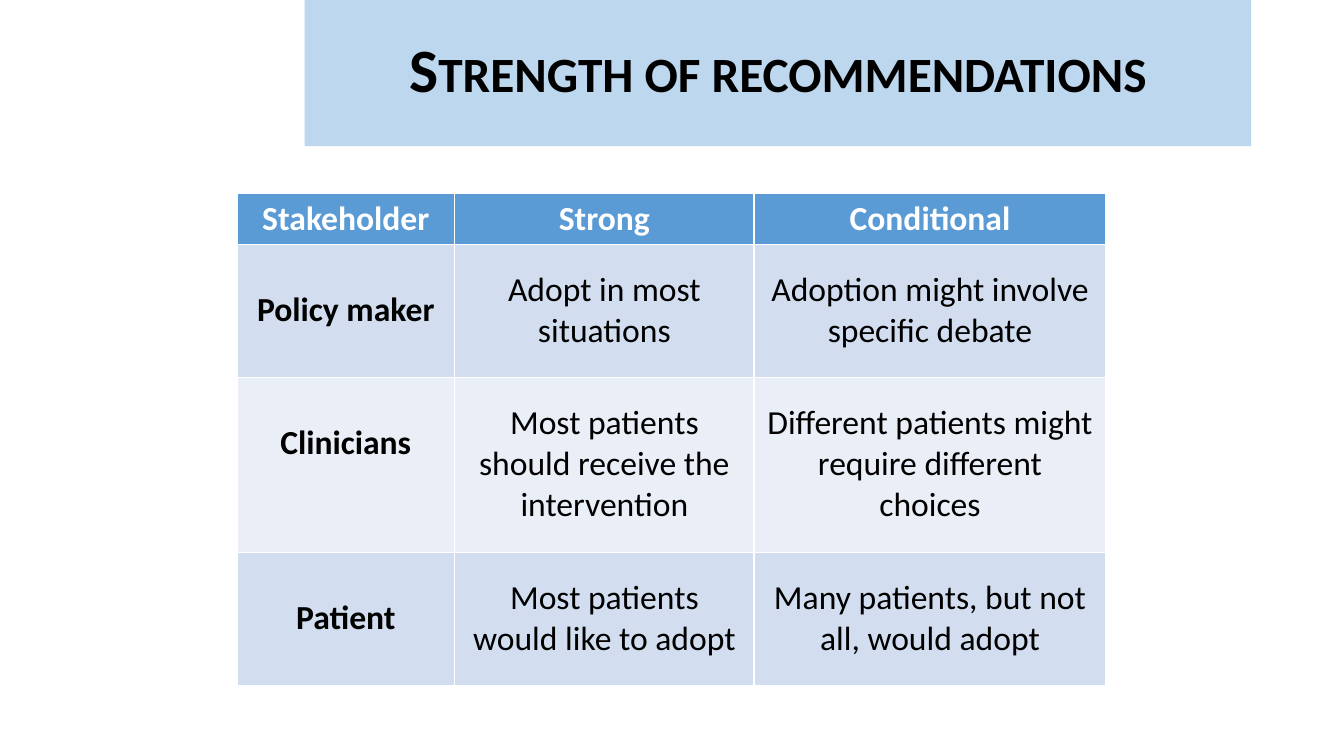
"""Builds a slide with a table on the strength of recommendations."""
import pptx
import pptx.dml.color
import pptx.enum.shapes
import pptx.enum.text
import pptx.util

SLIDE_WIDTH = pptx.util.Inches(13.33)
SLIDE_HEIGHT = pptx.util.Inches(7.5)
FONT = "Calibri"
COLORS = {
    "banner": "BDD7EE",
    "header": "5B9BD5",
    "odd_row": "D2DEEF",
    "even_row": "EAEFF7",
    "dark_text": "000000",
    "light_text": "FFFFFF",
}
COLUMN_SHARES = [16.2, 22.28, 26.18]
ROW_SHARES = [6.77, 17.6, 23.07, 17.6]
ROWS = [
    ["Stakeholder", "Strong", "Conditional"],
    ["Policy maker", "Adopt in most situations",
     "Adoption might involve specific debate"],
    ["Clinicians", "Most patients should receive the intervention",
     "Different patients might require different choices"],
    ["Patient", "Most patients would like to adopt",
     "Many patients, but not all, would adopt"],
]


def across(percent):
    """Return a percentage of the slide width."""
    return round(SLIDE_WIDTH * percent / 100)


def down(percent):
    """Return a percentage of the slide height."""
    return round(SLIDE_HEIGHT * percent / 100)


def fill_with(target, color):
    """Give a shape or a cell a solid fill."""
    target.fill.solid()
    target.fill.fore_color.rgb = pptx.dml.color.RGBColor.from_string(COLORS[color])


def write_centered(text_frame, text, size, color, bold):
    """Write one centred paragraph and return it."""
    text_frame.text = text
    paragraph = text_frame.paragraphs[0]
    paragraph.alignment = pptx.enum.text.PP_ALIGN.CENTER
    font = paragraph.runs[0].font
    font.name = FONT
    font.size = pptx.util.Pt(size)
    font.bold = bold
    font.color.rgb = pptx.dml.color.RGBColor.from_string(COLORS[color])
    return paragraph


def add_banner(slide, title):
    """Add the title band in small capitals."""
    banner = slide.shapes.add_shape(
        pptx.enum.shapes.MSO_SHAPE.RECTANGLE,
        across(22.66), 0, across(70.44), down(19.33))
    banner.shadow.inherit = False
    banner.line.fill.background()
    fill_with(banner, "banner")
    banner.text_frame.word_wrap = True
    banner.text_frame.vertical_anchor = pptx.enum.text.MSO_ANCHOR.MIDDLE
    paragraph = write_centered(banner.text_frame, title, 44, "dark_text", True)
    paragraph.line_spacing = 0.9
    paragraph.runs[0].font._element.set("cap", "small")


def format_cell(cell, text, row, column):
    """Fill one cell according to its place in the table."""
    is_header = row == 0
    is_label = column == 0
    if is_header:
        fill_with(cell, "header")
    else:
        fill_with(cell, "odd_row" if row % 2 else "even_row")
        cell.margin_top = pptx.util.Inches(0.45 if is_label else 0.25)
    write_centered(cell.text_frame, text, 24,
                   "light_text" if is_header else "dark_text",
                   is_header or is_label)


def add_recommendation_table(slide):
    """Add the table of stakeholders and recommendation strengths."""
    table = slide.shapes.add_table(
        len(ROW_SHARES), len(COLUMN_SHARES), across(17.63), down(25.6),
        across(sum(COLUMN_SHARES)), down(sum(ROW_SHARES))).table
    for column, share in zip(table.columns, COLUMN_SHARES):
        column.width = across(share)
    for row, share in zip(table.rows, ROW_SHARES):
        row.height = down(share)
    for row, texts in enumerate(ROWS):
        for column, text in enumerate(texts):
            format_cell(table.cell(row, column), text, row, column)


def main():
    """Build and save the presentation."""
    presentation = pptx.Presentation()
    presentation.slide_width = SLIDE_WIDTH
    presentation.slide_height = SLIDE_HEIGHT
    slide = presentation.slides.add_slide(presentation.slide_layouts[6])
    add_banner(slide, "Strength of recommendations")
    add_recommendation_table(slide)
    presentation.save("out.pptx")


if __name__ == "__main__":
    main()
